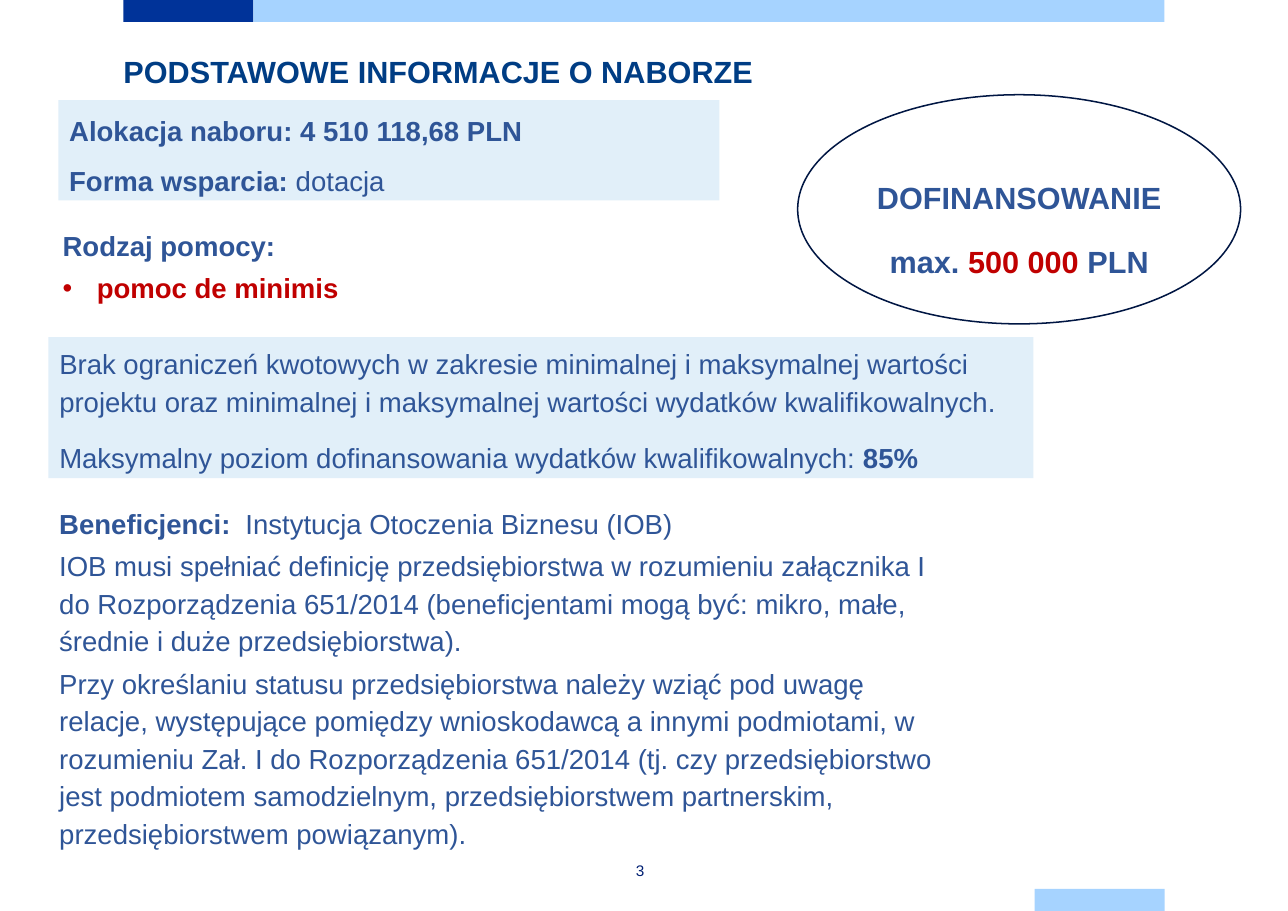
from dataclasses import dataclass, field
from lxml import etree
from pptx import Presentation
from pptx.dml.color import RGBColor
from pptx.enum.shapes import MSO_SHAPE
from pptx.enum.text import MSO_ANCHOR, MSO_AUTO_SIZE, PP_ALIGN
from pptx.oxml.ns import qn
from pptx.util import Inches, Pt

RECT, OVAL = MSO_SHAPE.RECTANGLE, MSO_SHAPE.OVAL
TOP, MIDDLE = MSO_ANCHOR.TOP, MSO_ANCHOR.MIDDLE
GROW, FIXED = MSO_AUTO_SIZE.SHAPE_TO_FIT_TEXT, MSO_AUTO_SIZE.NONE
LEFT, CENTER = PP_ALIGN.LEFT, PP_ALIGN.CENTER

WIDE, HIGH = Inches(11.69), Inches(8.27)
NAVY, SKY, PALE = "003399", "A6D3FF", "E1EFF9"
BLUE, RED, DARK, HEAD, EDGE = "2F5597", "C00000", "002073", "003D84", "001643"


@dataclass
class Run:
    text: str
    bold: bool = False
    color: str = BLUE
    size: int = 18


@dataclass
class Para:
    runs: list[Run]
    form: dict = field(default_factory=dict)
    bullet: bool = False
    tab: float = 0


@dataclass
class Box:
    """The area holds left, top, width and height in percent of the slide."""
    area: tuple[float, float, float, float]
    paras: list[Para] = field(default_factory=list)
    kind: int | None = None
    fill: str | None = None
    line: str | None = None
    form: dict = field(default_factory=dict)


def paint(code: str) -> RGBColor:
    return RGBColor.from_string(code)


def style(item, form: dict) -> None:
    for name, value in form.items():
        setattr(item, name, value)


def write(para, data: Para) -> None:
    props = para._p.get_or_add_pPr()
    if data.bullet:
        step = Inches(0.31)
        props.set("marL", str(step))
        props.set("indent", str(-step))
        etree.SubElement(props, qn("a:buFont"), typeface="Arial")
        etree.SubElement(props, qn("a:buChar"), char="•")
    if data.tab:
        tabs = etree.SubElement(props, qn("a:tabLst"))
        etree.SubElement(tabs, qn("a:tab"), pos=str(Inches(data.tab)), algn="l")
    style(para, {"alignment": LEFT} | data.form)
    for part in data.runs:
        run = para.add_run()
        run.text = part.text
        style(run.font, {"name": "Arial", "size": Pt(part.size), "bold": part.bold})
        run.font.color.rgb = paint(part.color)


def draw(slide, box: Box) -> None:
    place = [int(share * full / 100)
             for share, full in zip(box.area, (WIDE, HIGH) * 2)]
    if box.kind is None:
        shape = slide.shapes.add_textbox(*place)
    else:
        shape = slide.shapes.add_shape(box.kind, *place)
        shape.shadow.inherit = False
        if box.fill:
            shape.fill.solid()
            shape.fill.fore_color.rgb = paint(box.fill)
        else:
            shape.fill.background()
        if box.line:
            shape.line.color.rgb = paint(box.line)
            shape.line.width = Pt(1)
        else:
            shape.line.fill.background()
    if box.paras:
        frame = shape.text_frame
        style(frame, {"word_wrap": True, "auto_size": GROW,
                      "vertical_anchor": TOP} | box.form)
        for i, data in enumerate(box.paras):
            write(frame.add_paragraph() if i else frame.paragraphs[0], data)


# Paragraph and frame formats
TIGHT = {"line_spacing": 1.14, "space_after": Pt(3)}
LOOSE = {"line_spacing": 1.14, "space_after": Pt(12)}
CALL = {"line_spacing": 1.5, "space_after": Pt(6), "alignment": CENTER}
FLUSH = {"margin_left": 0, "margin_right": 0, "auto_size": FIXED}
BAR, DEEP = 10.09, 2.42

BOXES = [
    # Bars at the edges
    Box((9.58, 0, BAR, DEEP), kind=RECT, fill=NAVY),
    Box((19.67, 0, 70.74, DEEP), kind=RECT, fill=SKY),
    Box((80.33, 100 - DEEP, BAR, DEEP), kind=RECT, fill=SKY),
    # Title
    Box((9.58, 5.08, 51.84, 5.8),
        [Para([Run("PODSTAWOWE INFORMACJE O NABORZE", True, HEAD, 20)],
              {"line_spacing": Pt(28.6)})],
        form=FLUSH | {"margin_top": 0, "margin_bottom": 0}),
    # Budget and type of aid
    Box((4.53, 11, 51.33, 11), [
        Para([Run("Alokacja naboru: 4 510 118,68 PLN", True)], {"line_spacing": 1.25}),
        Para([Run("Forma wsparcia: ", True), Run("dotacja")],
             {"line_spacing": 1.25, "space_before": Pt(6), "space_after": Pt(6)}),
    ], RECT, PALE),
    Box((4.02, 24.06, 32.59, 9.67), [
        Para([Run("Rodzaj pomocy:", True)], TIGHT),
        Para([Run("pomoc de minimis", True, RED)], TIGHT, bullet=True),
    ]),
    # Callout
    Box((61.93, 10.4, 34.39, 25.15), kind=OVAL, line=EDGE),
    Box((65.1, 17.05, 28.06, 13.78), [
        Para([Run("DOFINANSOWANIE", True, size=20)], CALL),
        Para([Run("max. ", True, size=20), Run("500 000 ", True, RED, 20),
              Run("PLN", True, size=20)], CALL),
    ]),
    # Limits
    Box((3.76, 37, 76.48, 15.48), [
        Para([Run("Brak ograniczeń kwotowych w zakresie minimalnej i maksymalnej "
                  "wartości projektu oraz minimalnej i maksymalnej wartości "
                  "wydatków kwalifikowalnych.")], LOOSE),
        Para([Run("Maksymalny poziom dofinansowania wydatków kwalifikowalnych: "),
              Run("85%", True)], LOOSE),
    ], RECT, PALE),
    # Page number
    Box((44.65, 94.32, BAR, DEEP),
        [Para([Run("3", color=DARK, size=10)], {"alignment": CENTER})],
        form=FLUSH | {"vertical_anchor": MIDDLE, "margin_top": Inches(0.08),
                      "margin_bottom": Inches(0.08)}),
    # Beneficiaries
    Box((3.76, 54.53, 71.6, 39.42), [
        Para([Run("Beneficjenci:\t", True),
              Run("Instytucja Otoczenia Biznesu (IOB)")], TIGHT, tab=1.69),
        Para([Run("IOB musi spełniać definicję przedsiębiorstwa w rozumieniu "
                  "załącznika I do Rozporządzenia 651/2014 (beneficjentami mogą "
                  "być: mikro, małe, średnie i duże przedsiębiorstwa).")], TIGHT),
        Para([Run("Przy określaniu statusu przedsiębiorstwa należy wziąć pod uwagę "
                  "relacje, występujące pomiędzy wnioskodawcą a innymi podmiotami, "
                  "w rozumieniu Zał. I do Rozporządzenia 651/2014 (tj. czy "
                  "przedsiębiorstwo jest podmiotem samodzielnym, przedsiębiorstwem "
                  "partnerskim, przedsiębiorstwem powiązanym).")], TIGHT),
    ]),
]


def main() -> None:
    deck = Presentation()
    style(deck, {"slide_width": WIDE, "slide_height": HIGH})
    slide = deck.slides.add_slide(deck.slide_layouts[6])
    for box in BOXES:
        draw(slide, box)
    deck.save("out.pptx")


if __name__ == "__main__":
    main()
